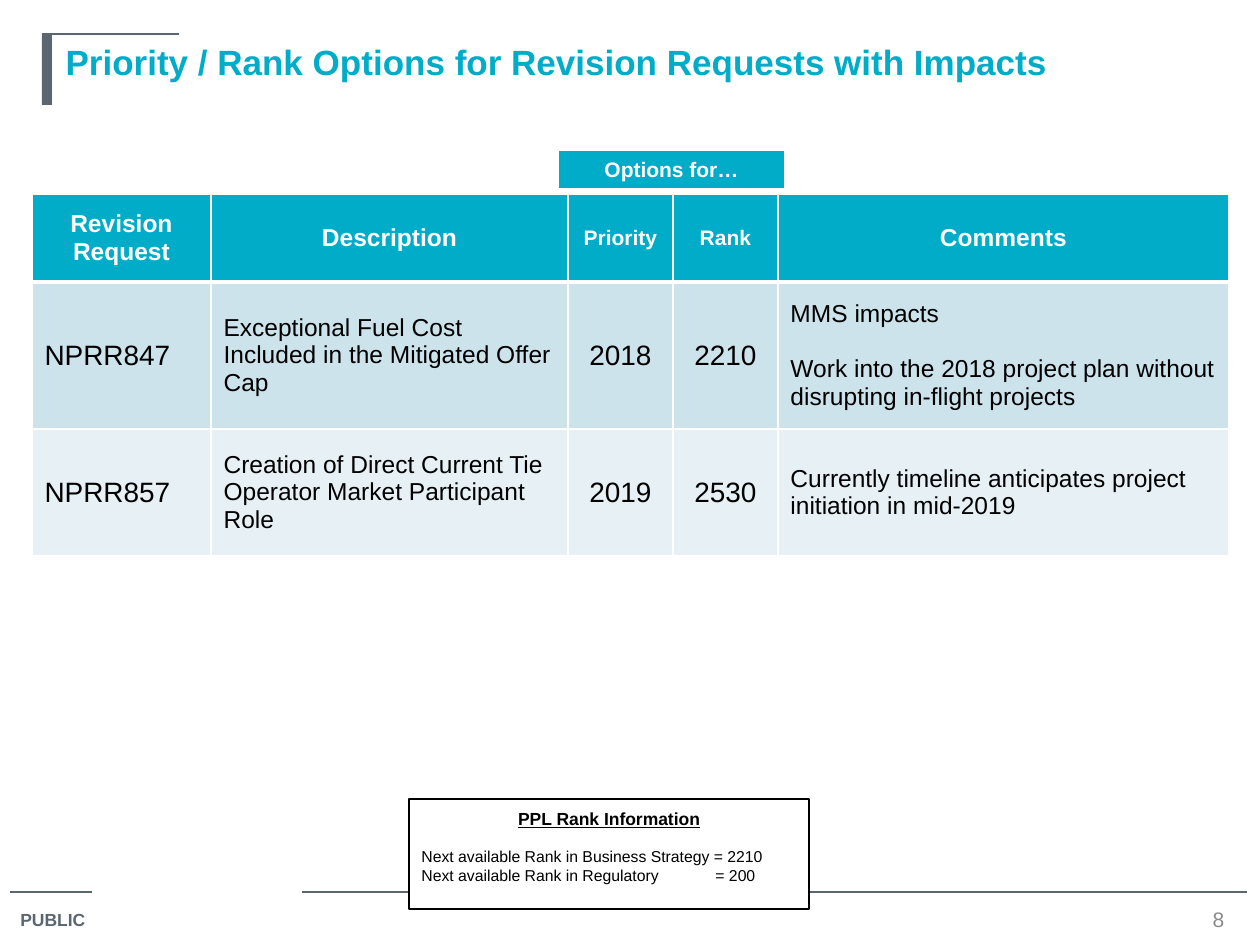
from lxml import etree
from pptx import Presentation
from pptx.dml.color import RGBColor
from pptx.enum.shapes import MSO_CONNECTOR, MSO_SHAPE
from pptx.enum.text import MSO_ANCHOR, MSO_AUTO_SIZE, PP_ALIGN
from pptx.oxml.ns import qn
from pptx.util import Pt

LEFT, CENTER = PP_ALIGN.LEFT, PP_ALIGN.CENTER
TOP, MIDDLE = MSO_ANCHOR.TOP, MSO_ANCHOR.MIDDLE
NO_AUTOFIT = MSO_AUTO_SIZE.NONE
RECTANGLE, STRAIGHT = MSO_SHAPE.RECTANGLE, MSO_CONNECTOR.STRAIGHT

SCALE = 914400 / 126  # EMU per px
COLORS = {
    "accent": "00ACC8", "slate": "5B6770", "page": "8C8C8C", "white": "FFFFFF",
    "black": "000000", "band_dark": "CCE3EB", "band_light": "E7F1F5",
}

HEADERS = [("Revision Request", 14), ("Description", 14), ("Priority", 12),
           ("Rank", 12), ("Comments", 14)]
REQUESTS = [
    ("NPRR847", "Exceptional Fuel Cost Included in the Mitigated Offer Cap",
     "2018", "2210",
     "MMS impacts\nWork into the 2018 project plan without disrupting in-flight projects"),
    ("NPRR857", "Creation of Direct Current Tie Operator Market Participant Role",
     "2019", "2530", "Currently timeline anticipates project initiation in mid-2019"),
]
BODY_FORMATS = [(16, LEFT), (14, LEFT), (16, CENTER), (16, CENTER), (14, LEFT)]
COLUMN_WIDTHS = [179, 357, 105, 105, 451]
ROW_HEIGHTS = [88, 147, 127]


def px(*lengths):
    return [round(length * SCALE) for length in lengths]


def color(key):
    return RGBColor.from_string(COLORS[key])


def write(paragraph, text, ink="black", align=LEFT, gap=0, **font):
    paragraph.text = text
    paragraph.alignment = align
    paragraph.space_before = Pt(gap)
    values = {"name": "Arial", "bold": False, **font}
    values["size"] = Pt(values["size"])
    for attribute, value in values.items():
        setattr(paragraph.font, attribute, value)
    paragraph.font.color.rgb = color(ink)


def set_frame(frame, anchor):
    frame.word_wrap = True
    frame.auto_size = NO_AUTOFIT
    frame.vertical_anchor = anchor


def add_label(slide, box, text, anchor=TOP, **style):
    frame = slide.shapes.add_textbox(*px(*box)).text_frame
    set_frame(frame, anchor)
    write(frame.paragraphs[0], text, **style)


def add_rule(slide, x1, x2, y):
    rule = slide.shapes.add_connector(STRAIGHT, *px(x1, y, x2, y))
    rule.line.color.rgb = color("slate")
    rule.line.width = Pt(0.75)
    etree.SubElement(rule._element.spPr, qn("a:effectLst"))


def add_block(slide, box, fill):
    block = slide.shapes.add_shape(RECTANGLE, *px(*box))
    block.shadow.inherit = False
    block.fill.solid()
    block.fill.fore_color.rgb = color(fill)
    block.line.fill.background()
    return block


def format_cell(cell, fill, top=1, bottom=1):
    properties = cell._tc.get_or_add_tcPr()
    for side, width in {"L": 1, "R": 1, "T": top, "B": bottom}.items():
        border = etree.SubElement(properties, qn(f"a:ln{side}"), w=str(Pt(width)))
        solid = etree.SubElement(border, qn("a:solidFill"))
        etree.SubElement(solid, qn("a:srgbClr"), val=COLORS["white"])
    cell.fill.solid()
    cell.fill.fore_color.rgb = color(fill)
    cell.vertical_anchor = MIDDLE


def add_grid(slide, left, top, widths, heights):
    grid = slide.shapes.add_table(
        len(heights), len(widths), *px(left, top, sum(widths), sum(heights))).table
    for column, width in zip(grid.columns, px(*widths)):
        column.width = width
    for row, height in zip(grid.rows, px(*heights)):
        row.height = height
    return grid


def add_header_cell(cell, text, size):
    format_cell(cell, "accent", bottom=3)
    write(cell.text_frame.paragraphs[0], text, "white", CENTER, size=size, bold=True)


def build_heading(slide, left, top, width, height):
    add_block(slide, (left, top, 10, height), "slate")
    add_rule(slide, left, left + 137, top)
    title = slide.shapes.title
    title.left, title.top, title.width, title.height = px(
        left + 11, top, width - 11, height)
    set_frame(title.text_frame, TOP)
    write(title.text_frame.paragraphs[0],
          "Priority / Rank Options for Revision Requests with Impacts",
          "accent", size=20, bold=True)


def build_requests(slide, left, top):
    grid = add_grid(slide, left, top, COLUMN_WIDTHS, ROW_HEIGHTS)
    for column, (text, size) in enumerate(HEADERS):
        add_header_cell(grid.cell(0, column), text, size)
    for row, request in enumerate(REQUESTS, 1):
        band = "band_dark" if row % 2 else "band_light"
        for column, (text, (size, align)) in enumerate(zip(request, BODY_FORMATS)):
            cell = grid.cell(row, column)
            format_cell(cell, band, top=3 if row == 1 else 1)
            frame = cell.text_frame
            for index, line in enumerate(text.split("\n")):
                paragraph = frame.add_paragraph() if index else frame.paragraphs[0]
                write(paragraph, line, align=align, gap=16 * index, size=size)
    # Tab above the Priority and Rank columns
    options = add_grid(slide, left + 526, top - 44, [227], [40])
    add_header_cell(options.cell(0, 0), "Options for…", 12)


def build_rank_box(slide, left, top, width, height):
    box = add_block(slide, (left, top, width, height), "white")
    box.line.color.rgb = color("black")
    box.line.width = Pt(0.75)
    frame = box.text_frame
    set_frame(frame, TOP)
    frame.margin_top = px(9)[0]
    heading, strategy, regulatory = (
        frame.paragraphs[0], frame.add_paragraph(), frame.add_paragraph())
    write(heading, "PPL Rank Information", align=CENTER,
          size=10, bold=True, underline=True)
    write(strategy, "Next available Rank in Business Strategy = 2210", gap=10, size=9)
    # Tab stop lines up the equals signs
    tabs = etree.SubElement(regulatory._p.get_or_add_pPr(), qn("a:tabLst"))
    etree.SubElement(tabs, qn("a:tab"), pos=str(px(294)[0]), algn="l")
    write(regulatory, "Next available Rank in Regulatory\t= 200", size=9)


def build_footer(slide, left, top, width):
    add_rule(slide, left, left + 82, top)
    add_rule(slide, left + 292, left + width, top)
    add_label(slide, (left - 2, top + 11, 97, 35), "PUBLIC",
              ink="slate", size=10, bold=True)
    add_label(slide, (left + width - 60, top + 13, 63, 29), "8", MIDDLE,
              ink="page", align=CENTER, size=12)


def main():
    deck = Presentation()
    deck.slide_width, deck.slide_height = px(1260, 945)
    slide = deck.slides.add_slide(deck.slide_layouts[5])
    build_footer(slide, 10, 892, 1237)
    build_heading(slide, 42, 34, 1082, 71)
    build_requests(slide, 32, 194)
    build_rank_box(slide, 409, 799, 400, 110)
    deck.save("out.pptx")


if __name__ == "__main__":
    main()
